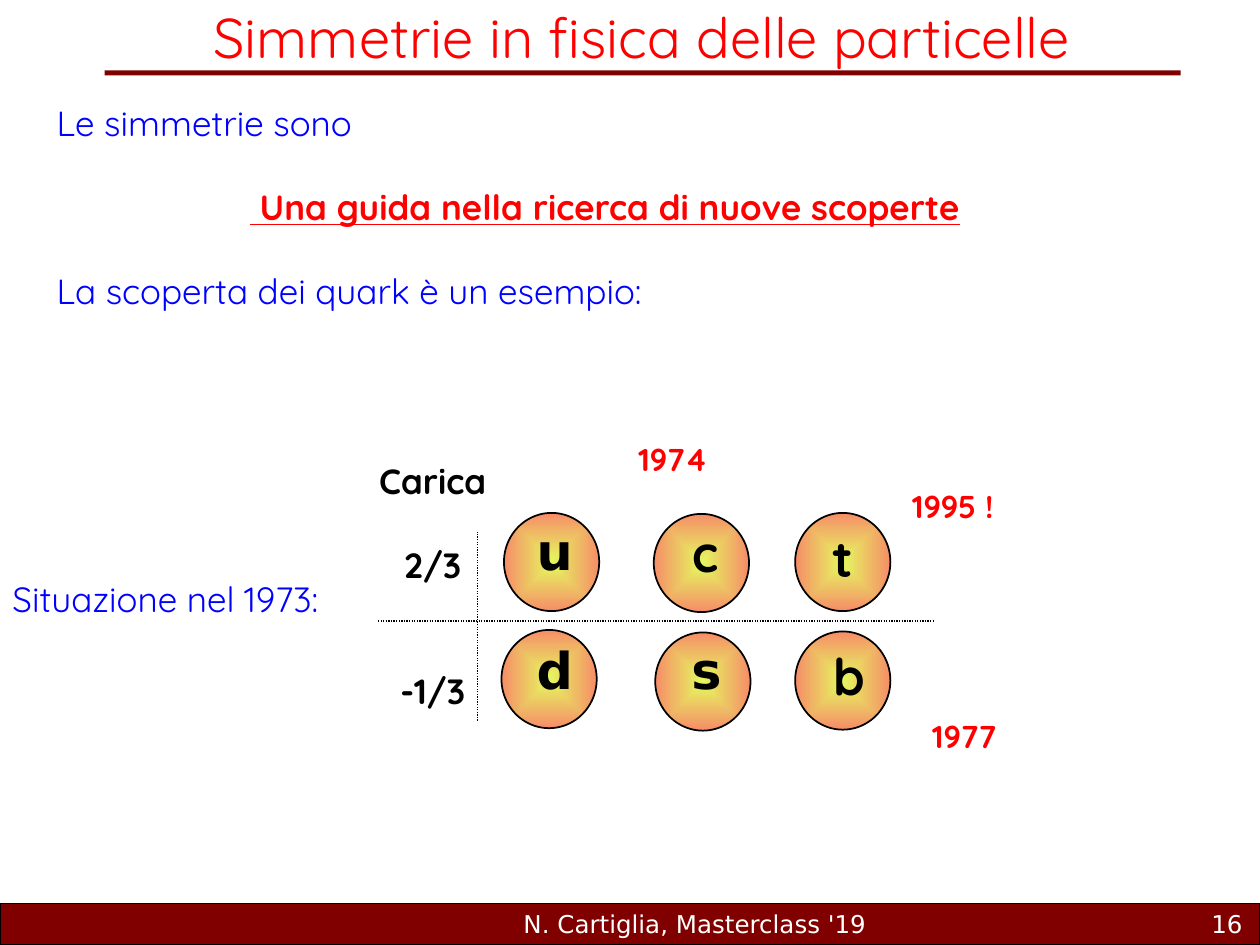
from lxml import etree
from pptx import Presentation
from pptx.dml.color import RGBColor
from pptx.enum import dml, shapes, text
from pptx.oxml import parse_xml
from pptx.oxml.ns import qn
from pptx.util import Cm, Pt

SANS, QUICK = "DejaVu Sans", "Quicksand"
RED, BLUE, BLACK, WHITE, WINE = "FF0000", "0000FF", "000000", "FFFFFF", "800000"
NS = "http://schemas.openxmlformats.org/drawingml/2006/main"
LEFT, MID, RIGHT = text.PP_ALIGN.LEFT, text.PP_ALIGN.CENTER, text.PP_ALIGN.RIGHT
rgb = RGBColor.from_string


def write(box, lines, size, color, font=QUICK, bold=False, align=LEFT, wrap=True):
    frame = box.text_frame
    frame.text = "\n".join(lines)
    frame.word_wrap = wrap
    frame.auto_size = text.MSO_AUTO_SIZE.NONE
    frame.vertical_anchor = text.MSO_ANCHOR.TOP
    for para in frame.paragraphs:
        para.alignment = align
        for run in para.runs:
            run.font.name, run.font.size, run.font.bold = font, Pt(size), bold
            run.font.color.rgb = rgb(color)
    return frame


def draw(kind, x, y, w, h):
    shape = slide.shapes.add_shape(kind, Cm(x), Cm(y), Cm(w), Cm(h))
    shape.shadow.inherit = False
    return shape


deck = Presentation()
deck.slide_width, deck.slide_height = Cm(25.4), Cm(19.05)
slide = deck.slides.add_slide(deck.slide_layouts[5])
add = slide.shapes.add_textbox

title = slide.shapes.title
title.left, title.top, title.width, title.height = Cm(0.89), Cm(-0.08), Cm(24.1), Cm(1.63)
write(title, ["Simmetrie in fisica delle particelle"], 32, RED, align=MID)

band = draw(shapes.MSO_SHAPE.RECTANGLE, 0, 18.21, 25.4, 0.84)
rule = draw(shapes.MSO_SHAPE.RECTANGLE, 2.11, 1.42, 21.69, 0.1)
for bar in (band, rule):
    bar.fill.solid()
    bar.fill.fore_color.rgb = rgb(WINE)
band.line.color.rgb = rgb(BLACK)
band.line.width = Pt(0.75)
rule.line.fill.background()

for label, x, w, align in (("N. Cartiglia, Masterclass '19", 8.89, 10.24, MID),
                           ("16", 20.02, 5.28, RIGHT)):
    foot = add(Cm(x), Cm(18.21), Cm(w), Cm(0.84))
    frame = write(foot, [label], 14, WHITE, SANS, align=align)
    frame.vertical_anchor = text.MSO_ANCHOR.MIDDLE

body = add(Cm(0.89), Cm(1.93), Cm(22.61), Cm(7.09))
frame = write(body, ["Le simmetrie sono",
                     " Una guida nella ricerca di nuove scoperte",
                     "La scoperta dei quark è un esempio:"], 20, BLUE)
for para in frame.paragraphs[1:]:
    para.space_before = Pt(24)
guide = frame.paragraphs[1]
guide.alignment = MID
font = guide.runs[0].font
font.bold = font.underline = True
font.color.rgb = rgb(RED)

state = add(Cm(0), Cm(11.51), Cm(7.62), Cm(1.12))
write(state, ["Situazione nel 1973:"], 20, BLUE)

quarks = (
    ("u", SANS, 10.16, 10.34, 10.57, 10.36, 1.19),
    ("d", SANS, 10.11, 12.7, 10.57, 12.75, 1.19),
    ("c", QUICK, 13.18, 10.36, 13.72, 10.39, 1.12),
    ("s", SANS, 13.21, 12.75, 13.69, 12.75, 1.07),
    ("t", QUICK, 16.03, 10.34, 16.54, 10.49, 0.79),
    ("b", QUICK, 16.03, 12.73, 16.56, 12.88, 1.14),
)
for name, face, x, y, left, top, wide in quarks:
    ball = draw(shapes.MSO_SHAPE.OVAL, x, y, 1.92, 1.98)
    ball.line.color.rgb = rgb(BLACK)
    ball.line.width = Pt(1)
    ball.fill.gradient()
    for stop, color, spot in zip(ball.fill.gradient_stops, ("E5F75F", "F68D68"), (0, 1)):
        stop.color.rgb = rgb(color)
        stop.position = spot
    lin = next(ball._element.spPr.iter(qn("a:lin")))
    lin.getparent().replace(lin, parse_xml(
        f'<a:path xmlns:a="{NS}" path="shape">'
        '<a:fillToRect l="50000" t="50000" r="50000" b="50000"/></a:path>'))
    tag = add(Cm(left), Cm(top), Cm(wide), Cm(1.46))
    write(tag, [name], 29, BLACK, face, True, wrap=False)

for year, x, y, w in (("1974", 12.62, 8.74, 1.96),
                      ("1995 !", 18.14, 9.7, 2.31),
                      ("1977", 18.54, 14.33, 1.96)):
    write(add(Cm(x), Cm(y), Cm(w), Cm(1.02)), [year], 18, RED, bold=True, wrap=False)

charge = add(Cm(7.29), Cm(9.14), Cm(2.87), Cm(5.38))
frame = write(charge, ["Carica", "2/3", "-1/3"], 20, BLACK, bold=True, align=MID, wrap=False)
for para, gap in zip(frame.paragraphs[1:], (24, 48)):
    para.space_before = Pt(gap)

for ends in ((7.62, 12.52, 18.82, 12.52), (9.63, 14.53, 9.63, 10.72)):
    axis = slide.shapes.add_connector(shapes.MSO_CONNECTOR.STRAIGHT, *map(Cm, ends))
    axis.line.color.rgb = rgb(BLACK)
    axis.line.width = Pt(0.75)
    axis.line.dash_style = dml.MSO_LINE.ROUND_DOT
    etree.SubElement(axis._element.spPr, qn("a:effectLst"))

deck.save("out.pptx")
